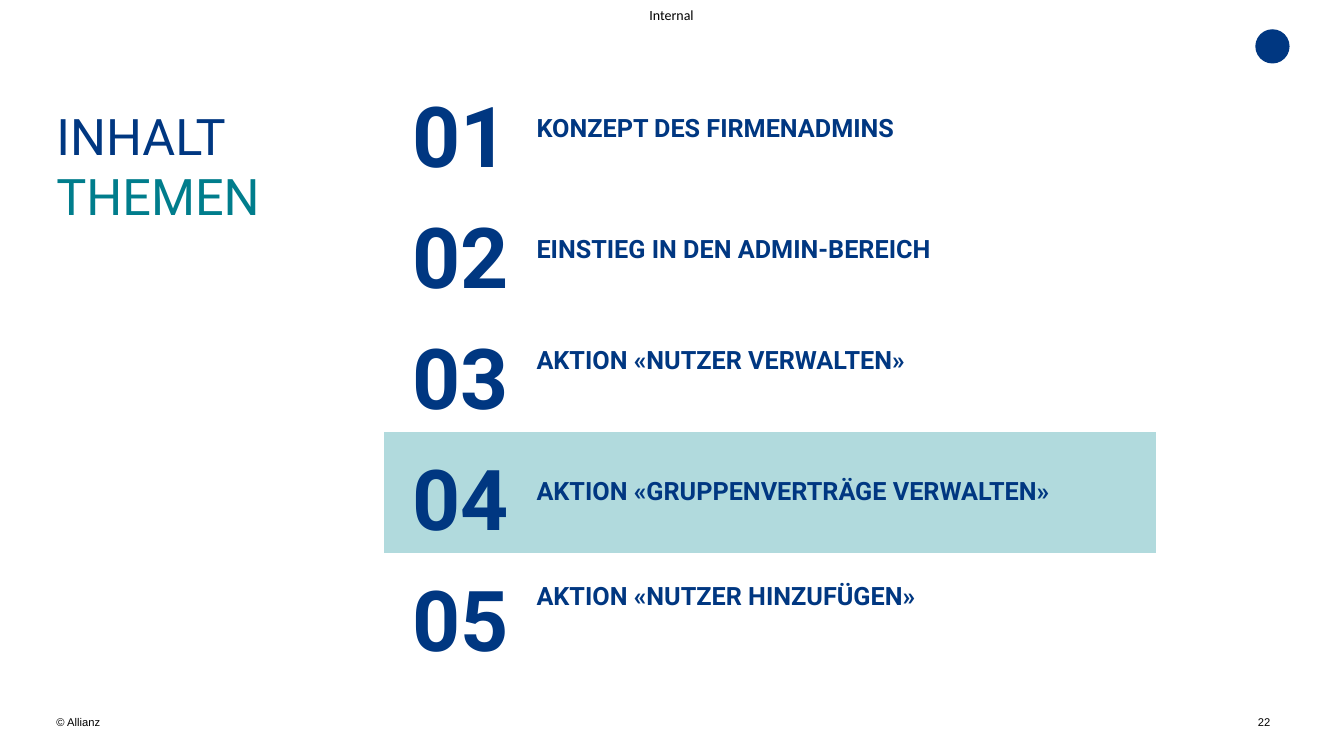
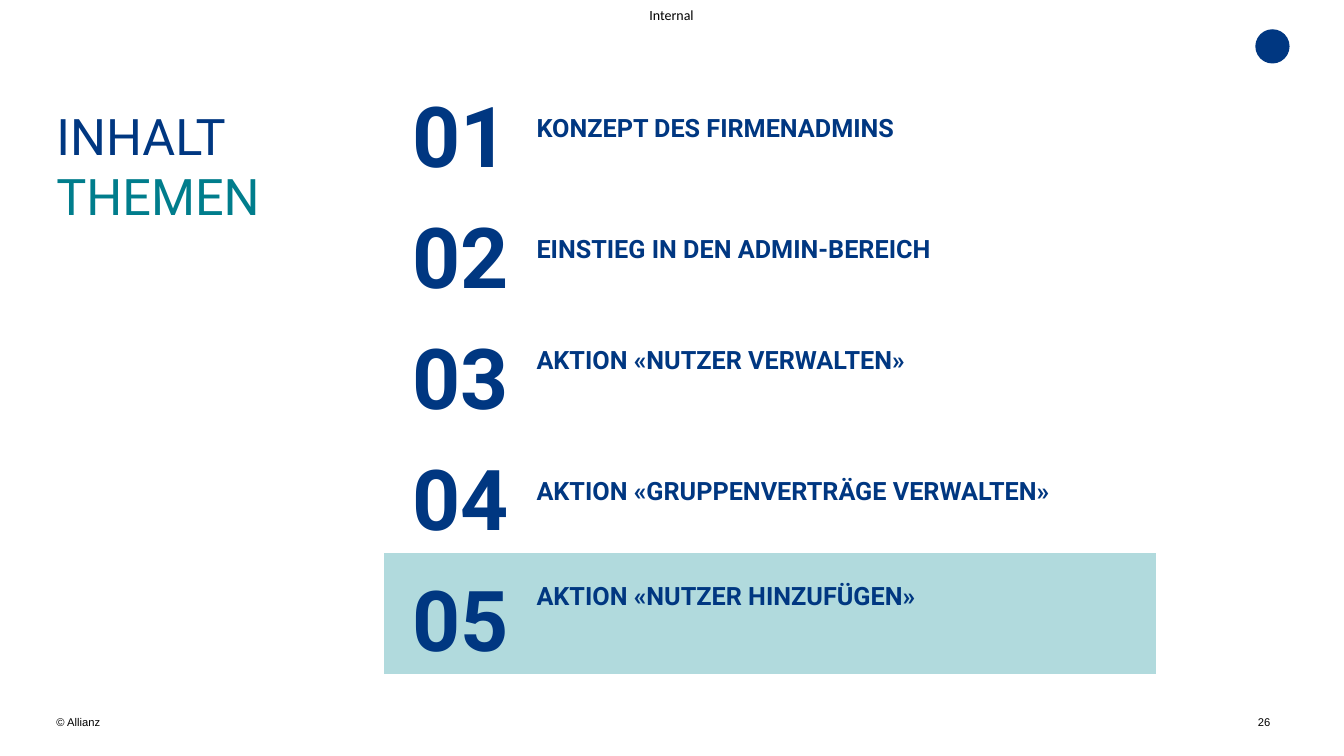
from pptx import Presentation
from pptx import util as u
from pptx.dml.color import RGBColor
from pptx.enum import shapes, text

NAVY = RGBColor(0x00, 0x37, 0x81)
TEAL = RGBColor(0x00, 0x7D, 0x8C)
PALE_TEAL = RGBColor(0xB1, 0xDA, 0xDD)
BLACK = RGBColor(0, 0, 0)

WIDTH, HEIGHT = u.Inches(13.33), u.Inches(7.5)
NO_GRID_STYLE = "{2D5ABB26-0587-4C30-8999-92F81FD0307C}"
COLUMNS = (1.51, 6.14, 1.18, 0.14)

# Each topic with the space below its label, in inches
TOPICS = (
    ("KONZEPT DES FIRMENADMINS", 0.05),
    ("EINSTIEG IN DEN ADMIN-BEREICH", 0.05),
    ("AKTION «NUTZER VERWALTEN»", 0.25),
    ("AKTION «GRUPPENVERTRÄGE VERWALTEN»", 0.05),
    ("AKTION «NUTZER HINZUFÜGEN»", 0.37),
)


def area(left, top, width, height):
    """Turn percentages of the slide into a box."""
    return (int(WIDTH * left / 100), int(HEIGHT * top / 100),
            int(WIDTH * width / 100), int(HEIGHT * height / 100))


def add_run(p, words, size, color, font="Roboto", bold=False):
    r = p.add_run()
    r.text = words
    r.font.size, r.font.name, r.font.bold = u.Pt(size), font, bold
    r.font.color.rgb = color


def set_margins(target, left=0, top=0, right=0, bottom=0):
    target.margin_left, target.margin_top = u.Inches(left), u.Inches(top)
    target.margin_right, target.margin_bottom = u.Inches(right), u.Inches(bottom)


def add_text(s, box, runs, align=text.PP_ALIGN.LEFT,
             anchor=text.MSO_ANCHOR.TOP, top=0, wrap=True):
    """Add one paragraph; each run is (words, size, color, font)."""
    tf = s.shapes.add_textbox(*box).text_frame
    tf.word_wrap, tf.vertical_anchor = wrap, anchor
    set_margins(tf, top=top)
    p = tf.paragraphs[0]
    p.alignment = align
    for run in runs:
        add_run(p, *run)


def add_frame(s, number):
    """Add the classification, emblem, copyright line and page number."""
    add_text(s, area(4.2, 94.67, 3.83, 1.73),
             [("© Allianz", 8, BLACK, "Arial")], wrap=False)
    add_text(s, area(47.19, 0, 5.55, 3.87), [("Internal", 10, BLACK, "Calibri")],
             text.PP_ALIGN.CENTER, text.MSO_ANCHOR.MIDDLE)
    add_text(s, area(90.17, 94.67, 4.35, 5.33),
             [(str(number), 8, BLACK, "Arial")], text.PP_ALIGN.RIGHT)
    emblem = s.shapes.add_shape(shapes.MSO_SHAPE.OVAL, *area(93.4, 3.87, 2.55, 4.53))
    emblem.shadow.inherit = False
    emblem.fill.solid()
    emblem.fill.fore_color.rgb = NAVY
    emblem.line.fill.background()


def add_title(s, box):
    add_text(s, box, [("INHALT ", 36, NAVY, "Roboto"),
                      ("THEMEN", 36, TEAL, "Roboto")], top=0.2)


def fill_cell(cell, words, size, align):
    cell.vertical_anchor = text.MSO_ANCHOR.MIDDLE
    p = cell.text_frame.paragraphs[0]
    p.alignment = align
    add_run(p, words, size, NAVY, bold=True)


def add_agenda(s, box, current):
    """Add the numbered topics and highlight the current one."""
    left, top, width, height = box
    frame = s.shapes.add_table(len(TOPICS), len(COLUMNS), left, top, width, height)
    table = frame.table
    table.first_row = table.horz_banding = False
    for style in frame.element.iter("{*}tableStyleId"):
        style.text = NO_GRID_STYLE
    for column, share in zip(table.columns, COLUMNS):
        column.width = int(width * share / sum(COLUMNS))

    for i, (topic, space_below) in enumerate(TOPICS):
        table.rows[i].height = height // len(TOPICS)
        for j in range(len(COLUMNS)):
            cell = table.cell(i, j)
            if i + 1 == current and j < 2:
                cell.fill.solid()
                cell.fill.fore_color.rgb = PALE_TEAL
            else:
                cell.fill.background()
        number, label = table.cell(i, 0), table.cell(i, 1)
        set_margins(number, top=0.2)
        fill_cell(number, f"{i + 1:02}", 60, text.PP_ALIGN.CENTER)
        set_margins(label, top=0.05, right=0.1, bottom=space_below)
        fill_cell(label, topic, 18, text.PP_ALIGN.LEFT)


def add_agenda_slide(prs, number, current):
    s = prs.slides.add_slide(prs.slide_layouts[6])
    add_frame(s, number)
    add_agenda(s, area(28.58, 9.07, 67.37, 79.73), current)
    add_title(s, area(4.2, 11.2, 25.06, 64))


def main():
    prs = Presentation()
    prs.slide_width, prs.slide_height = WIDTH, HEIGHT
    for number, current in ((22, 4), (26, 5)):
        add_agenda_slide(prs, number, current)
    prs.save("out.pptx")


if __name__ == "__main__":
    main()
